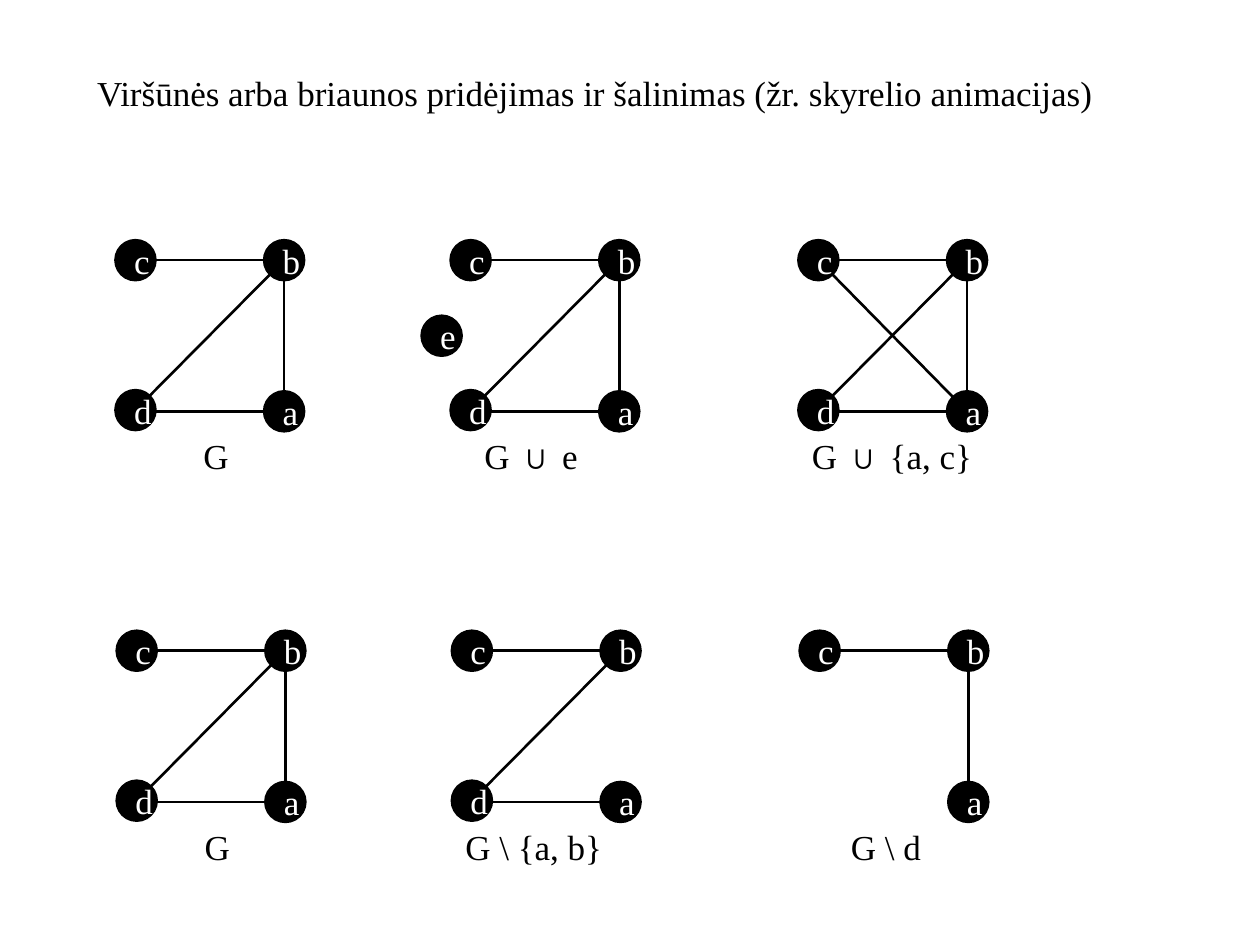
from dataclasses import dataclass
from math import hypot

from lxml.etree import SubElement
from pptx import Presentation
from pptx.dml.color import RGBColor
from pptx.enum.shapes import MSO_CONNECTOR as Connector, MSO_SHAPE as Shape
from pptx.enum.text import MSO_ANCHOR as Anchor, MSO_AUTO_SIZE as AutoSize, PP_ALIGN as Align
from pptx.oxml.ns import qn
from pptx.util import Inches, Pt


@dataclass(frozen=True)
class Theme:
    ink: RGBColor = RGBColor(0, 0, 0)
    paper: RGBColor = RGBColor(255, 255, 255)
    font: str = "Times New Roman"
    text_size: float = 20
    outline: float = 2
    edge: float = 1.5


# Grid of 100 columns by 75 rows, each cell 0.1 inch
COLUMNS, ROWS, CELL = 100, 75, 0.1
NODE = 3.1            # node diameter
LABEL_CENTRE = 7.55   # from a graph's left side
LABEL_TOP = 14.9      # from a graph's top
TEXT_HEIGHT = 4.4

# Node places inside one graph
PLACES = {"c": (0, 0), "b": (11.8, 0), "d": (0, 11.9), "a": (11.8, 12), "e": (-2.3, 6)}

# Left, top, nodes, edges, label, label width
GRAPHS = [
    (9.2, 19.1, "cbda", "cb da ba db", "G", 3.2),
    (35.8, 19.1, "cbdae", "cb da ba db", "G ∪ e", 11.8),
    (63.4, 19.1, "cbda", "cb da ba db ca", "G ∪ {a, c}", 15),
    (9.3, 50.1, "cbda", "cb da ba db", "G", 3.2),
    (35.9, 50.1, "cbda", "cb da db", "G \\ {a, b}", 15),
    (63.5, 50.1, "cba", "cb ba", "G \\ d", 9),
]


def grid(*cells):
    return [Inches(cell * CELL) for cell in cells]


class GraphPage:
    def __init__(self, deck, theme):
        self.theme = theme
        self.page = deck.slides.add_slide(deck.slide_layouts[5])
        self.page.background.fill.solid()
        self.page.background.fill.fore_color.rgb = theme.paper

    def set_text(self, shape, text, color, align, anchor):
        frame = shape.text_frame
        frame.word_wrap = True
        frame.auto_size = AutoSize.NONE
        frame.vertical_anchor = anchor
        para = frame.paragraphs[0]
        para.alignment = align
        span = para.add_run()
        span.text = text
        span.font.name = self.theme.font
        span.font.size = Pt(self.theme.text_size)
        span.font.color.rgb = color

    def title(self, text, left, top, width):
        box = self.page.shapes.title
        box.left, box.top, box.width, box.height = grid(left, top, width, TEXT_HEIGHT)
        self.set_text(box, text, self.theme.ink, Align.LEFT, Anchor.TOP)

    def label(self, shapes, text, left, top, width):
        box = shapes.add_textbox(*grid(left, top, width, TEXT_HEIGHT))
        self.set_text(box, text, self.theme.ink, Align.LEFT, Anchor.TOP)

    def node(self, shapes, name, left, top):
        dot = shapes.add_shape(Shape.OVAL, *grid(left, top, NODE, NODE))
        dot.shadow.inherit = False
        dot.fill.solid()
        dot.fill.fore_color.rgb = self.theme.ink
        dot.line.color.rgb = self.theme.ink
        dot.line.width = Pt(self.theme.outline)
        self.set_text(dot, name, self.theme.paper, Align.CENTER, Anchor.MIDDLE)

    def edge(self, shapes, start, end):
        """Join the rims of two nodes given by their centres."""
        (x1, y1), (x2, y2) = start, end
        if abs(y2 - y1) < 1:
            y1 = y2  # keep level edges level
        length = hypot(x2 - x1, y2 - y1)
        dx, dy = ((x2 - x1) / length * NODE / 2, (y2 - y1) / length * NODE / 2)
        line = shapes.add_connector(
            Connector.STRAIGHT, *grid(x1 + dx, y1 + dy, x2 - dx, y2 - dy))
        line.line.color.rgb = self.theme.ink
        line.line.width = Pt(self.theme.edge)
        SubElement(line._element.spPr, qn("a:effectLst"))

    def graph(self, left, top, nodes, edges, label, label_width):
        shapes = self.page.shapes.add_group_shape().shapes
        corners = {name: (left + PLACES[name][0], top + PLACES[name][1]) for name in nodes}
        centres = {name: (x + NODE / 2, y + NODE / 2) for name, (x, y) in corners.items()}
        for name, corner in corners.items():
            self.node(shapes, name, *corner)
        for start, end in edges.split():
            self.edge(shapes, centres[start], centres[end])
        self.label(shapes, label, left + LABEL_CENTRE - label_width / 2,
                   top + LABEL_TOP, label_width)


def main():
    deck = Presentation()
    deck.slide_width, deck.slide_height = grid(COLUMNS, ROWS)
    page = GraphPage(deck, Theme())

    # Heading
    page.title("Viršūnės arba briaunos pridėjimas ir šalinimas (žr. skyrelio animacijas)",
               6.7, 5.2, 88.2)

    # Additions in the upper row, removals in the lower row
    for graph in GRAPHS:
        page.graph(*graph)

    deck.save("out.pptx")


if __name__ == "__main__":
    main()
